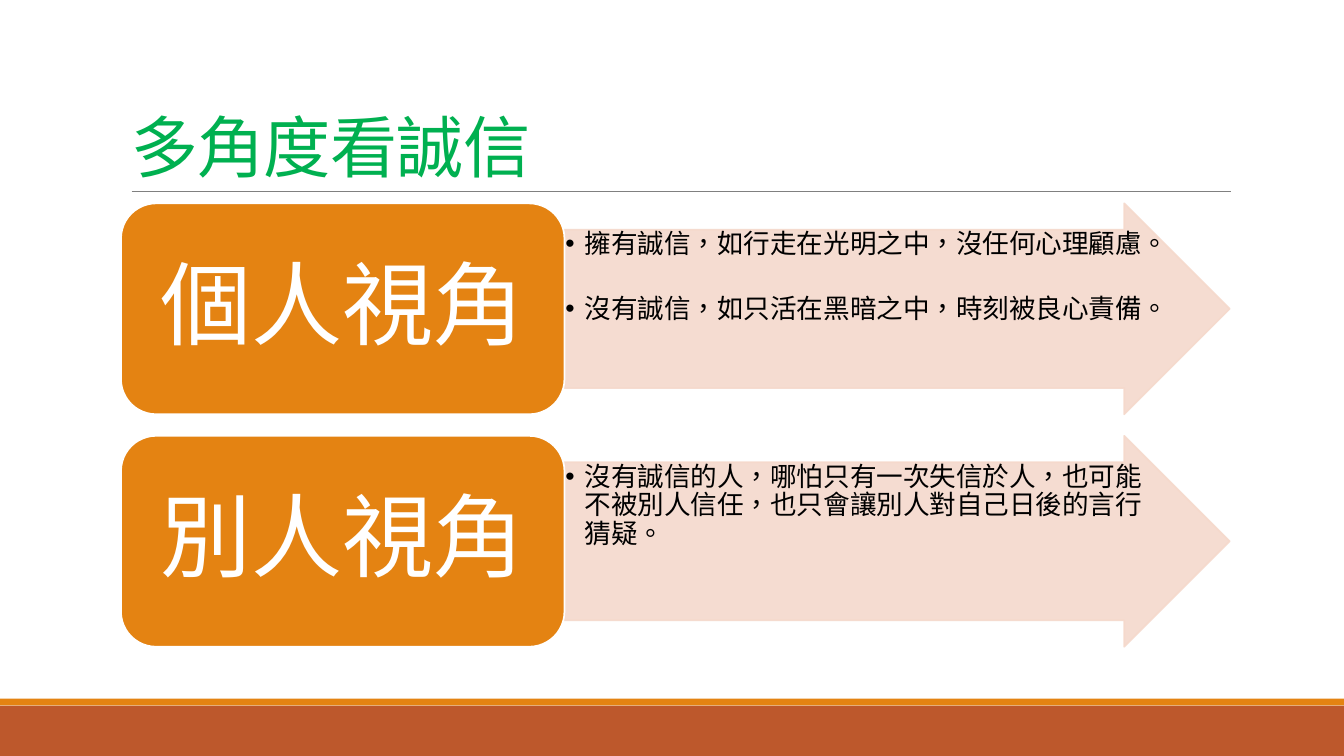
from lxml.etree import SubElement
from pptx import Presentation
from pptx.dml.color import RGBColor
from pptx.enum.lang import MSO_LANGUAGE_ID
from pptx.enum.shapes import MSO_CONNECTOR, MSO_SHAPE
from pptx.enum.text import MSO_ANCHOR, MSO_AUTO_SIZE, PP_ALIGN
from pptx.oxml.ns import qn
from pptx.util import Inches, Pt

COLOURS = {
    "band": "BD582C", "orange": "E48312", "rule": "808080", "title": "00B050",
    "arrow": "F5D9CC", "white": "FFFFFF", "black": "000000",
}
WIDTH, HEIGHT = Inches(13.33), Inches(7.5)
CJK_FONT = "Noto Sans CJK SC"
FIRST_ROW, ROW_STEP, ROW_HEIGHT = 26.9, 30.75, 27.9
LABEL_LEFT, LABEL_WIDTH = 9, 33
ARROW_LEFT, ARROW_WIDTH = LABEL_LEFT + LABEL_WIDTH, 49.5
PERSPECTIVES = [
    ("個人視角", ["擁有誠信，如行走在光明之中，沒任何心理顧慮。",
              "沒有誠信，如只活在黑暗之中，時刻被良心責備。"]),
    ("別人視角", ["沒有誠信的人，哪怕只有一次失信於人，也可能不被別人信任，"
              "也只會讓別人對自己日後的言行猜疑。"]),
]


def colour(key):
    """Return the named colour."""
    return RGBColor.from_string(COLOURS[key])


def area(left, top, width, height):
    """Turn percentages of the slide into a position and size."""
    return (int(WIDTH * left / 100), int(HEIGHT * top / 100),
            int(WIDTH * width / 100), int(HEIGHT * height / 100))


def place(placeholder, share):
    """Move a placeholder to a share of the slide."""
    (placeholder.left, placeholder.top,
     placeholder.width, placeholder.height) = area(*share)


def add_panel(slide, preset, share, fill, outline=None):
    """Add a filled preset shape with an optional outline."""
    panel = slide.shapes.add_shape(preset, *area(*share))
    panel.shadow.inherit = False
    panel.fill.solid()
    panel.fill.fore_color.rgb = colour(fill)
    if outline:
        panel.line.color.rgb = colour(outline)
        panel.line.width = Pt(1.25)
    else:
        panel.line.fill.background()
    return panel


def set_up_frame(frame, anchor, across, down):
    """Set wrapping, anchor and insets of a text frame."""
    frame.auto_size = MSO_AUTO_SIZE.NONE
    frame.word_wrap = True
    frame.vertical_anchor = anchor
    frame.margin_left = frame.margin_right = Inches(across)
    frame.margin_top = frame.margin_bottom = Inches(down)


def add_words(paragraph, words, size, ink, latin="Calibri", spacing=0.9):
    """Add one run of Traditional Chinese text."""
    paragraph.line_spacing = spacing
    paragraph.space_before = Pt(0)
    run = paragraph.add_run()
    run.text = words
    run.font.size = Pt(size)
    run.font.name = latin
    run.font.color.rgb = colour(ink)
    run.font.language_id = MSO_LANGUAGE_ID.TRADITIONAL_CHINESE
    properties = run.font._element
    SubElement(properties, qn("a:ea")).set("typeface", CJK_FONT)
    return properties


def add_title(title):
    """Fill the title placeholder."""
    place(title, (9, 4.1, 82.5, 21.2))
    set_up_frame(title.text_frame, MSO_ANCHOR.BOTTOM, 0.1, 0.05)
    heading = title.text_frame.paragraphs[0]
    heading.alignment = PP_ALIGN.LEFT
    add_words(heading, "多角度看誠信", 48, "title", CJK_FONT, 0.85).set("spc", "-50")


def add_rule(slide):
    """Draw the thin line under the title."""
    left, top, width, _ = area(9.8, 25.35, 81.8, 0)
    rule = slide.shapes.add_connector(
        MSO_CONNECTOR.STRAIGHT, left, top, left + width, top)
    rule.line.color.rgb = colour("rule")
    rule.line.width = Pt(0.5)
    SubElement(rule._element.spPr, qn("a:effectLst"))


def add_arrow(slide, top):
    """Add a slightly transparent arrow."""
    arrow = add_panel(slide, MSO_SHAPE.RIGHT_ARROW,
                      (ARROW_LEFT, top, ARROW_WIDTH, ROW_HEIGHT), "arrow", "arrow")
    arrow.adjustments[0], arrow.adjustments[1] = 0.75, 0.5
    for tint in arrow._element.spPr.iter(qn("a:srgbClr")):
        SubElement(tint, qn("a:alpha")).set("val", "90000")


def add_label(slide, top, words):
    """Add the rounded label that names a perspective."""
    label = add_panel(slide, MSO_SHAPE.ROUNDED_RECTANGLE,
                      (LABEL_LEFT, top, LABEL_WIDTH, ROW_HEIGHT), "orange", "white")
    set_up_frame(label.text_frame, MSO_ANCHOR.MIDDLE, 0.27, 0.14)
    name = label.text_frame.paragraphs[0]
    name.alignment = PP_ALIGN.CENTER
    add_words(name, words, 65, "white")


def fill_views(body, top, views):
    """Fill a body placeholder with bulleted views, in front of its arrow."""
    place(body, (ARROW_LEFT, top + 3.5, 43.6, 20.9))
    set_up_frame(body.text_frame, MSO_ANCHOR.TOP, 0.01, 0.01)
    for index, words in enumerate(views):
        view = (body.text_frame.add_paragraph() if index
                else body.text_frame.paragraphs[0])
        view.alignment = PP_ALIGN.LEFT
        add_words(view, words, 19, "black")
        view.space_after = Pt(25.5)
        properties = view._element.get_or_add_pPr()
        properties.set("marL", str(Inches(0.19)))
        properties.set("indent", str(-Inches(0.19)))
        SubElement(properties, qn("a:buChar")).set("char", "•")
    body._element.getparent().append(body._element)


def main():
    """Build and save the slide."""
    deck = Presentation()
    deck.slide_width, deck.slide_height = WIDTH, HEIGHT
    slide = deck.slides.add_slide(deck.slide_layouts.get_by_name("Two Content"))
    title, *bodies = list(slide.placeholders)
    add_panel(slide, MSO_SHAPE.RECTANGLE, (0, 93.33, 100, 6.67), "band")
    add_panel(slide, MSO_SHAPE.RECTANGLE, (0, 92.4, 100, 0.9), "orange")
    add_rule(slide)
    add_title(title)
    for row, (body, (name, views)) in enumerate(zip(bodies, PERSPECTIVES)):
        top = FIRST_ROW + row * ROW_STEP
        add_arrow(slide, top)
        fill_views(body, top, views)
        add_label(slide, top, name)
    deck.save("out.pptx")


if __name__ == "__main__":
    main()
